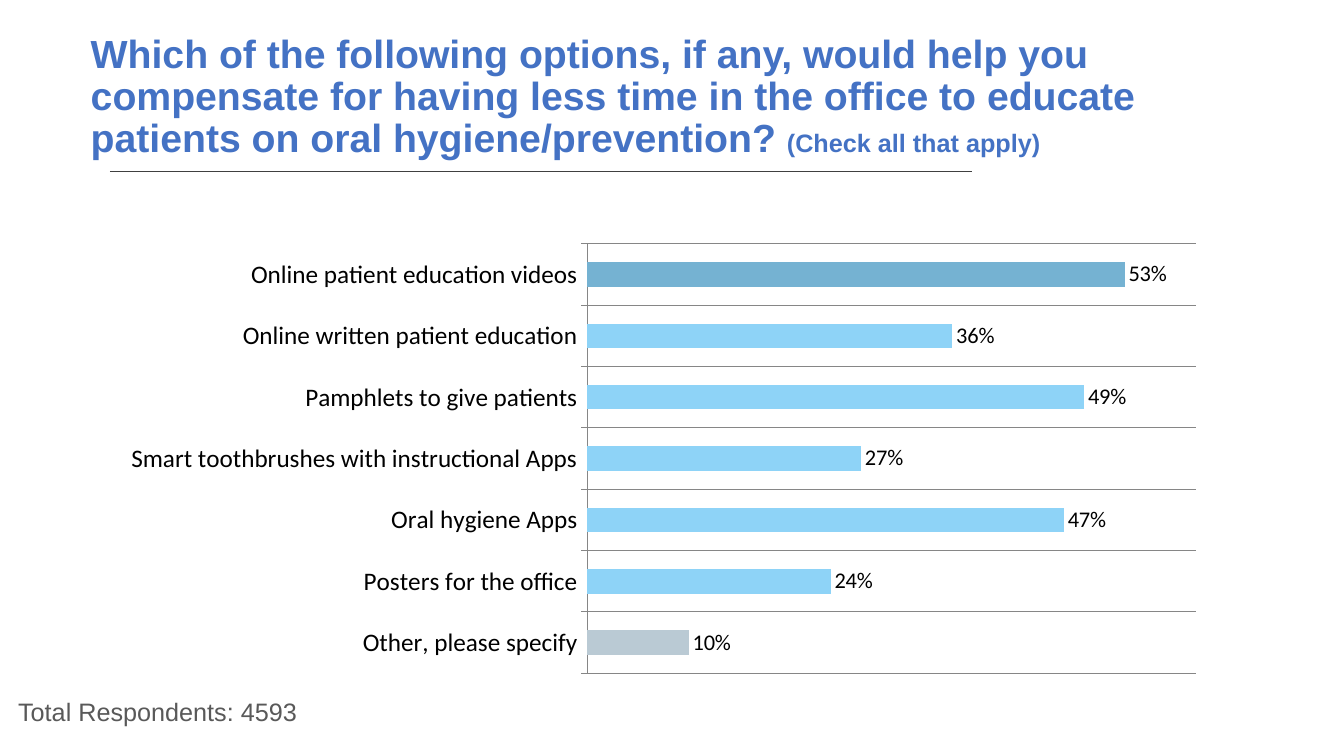
"""Build a survey slide with a bar chart of patient education options."""
from dataclasses import dataclass

from lxml.etree import SubElement
from pptx import Presentation
from pptx.chart.data import CategoryChartData
from pptx.dml.color import RGBColor
from pptx.enum.chart import XL_CHART_TYPE, XL_LABEL_POSITION, XL_TICK_MARK
from pptx.enum.shapes import MSO_CONNECTOR
from pptx.enum.text import MSO_ANCHOR, MSO_AUTO_SIZE, PP_ALIGN
from pptx.oxml import parse_xml
from pptx.oxml.ns import nsdecls, qn
from pptx.util import Inches, Pt

TITLE_BLUE = "4472C4"
FOOT_GREY = "595959"
BLACK = "000000"
AXIS_GREY = "868686"
LIGHT_BLUE = "8ED3F7"


@dataclass(frozen=True)
class Answer:
    """One survey answer with its share and bar colour."""
    label: str
    share: float
    colour: str = LIGHT_BLUE


@dataclass(frozen=True)
class Span:
    """One run of text with its look."""
    text: str
    size: float
    colour: str
    bold: bool = False


ANSWERS = [
    Answer("Online patient education videos", 0.53, "75B2D2"),
    Answer("Online written patient education", 0.36),
    Answer("Pamphlets to give patients", 0.49),
    Answer("Smart toothbrushes with instructional Apps", 0.27),
    Answer("Oral hygiene Apps", 0.47),
    Answer("Posters for the office", 0.24),
    Answer("Other, please specify", 0.10, "BACAD4"),
]
TITLE = [
    Span("Which of the following options, if any, would help you compensate for "
         "having less time in the office to educate patients on oral "
         "hygiene/prevention? ", 28, TITLE_BLUE, True),
    Span("(Check all that apply)", 18, TITLE_BLUE, True),
]
RESPONDENTS = [Span("Total Respondents: 4593", 18, FOOT_GREY)]


def colour(code: str) -> RGBColor:
    """Turn a hex string into a colour."""
    return RGBColor.from_string(code)


def fill_placeholder(box, place: tuple, spans: list[Span], anchor) -> None:
    """Move a placeholder and write its single paragraph run by run."""
    box.left, box.top, box.width, box.height = map(Inches, place)
    frame = box.text_frame
    frame.word_wrap = True
    frame.auto_size = MSO_AUTO_SIZE.NONE
    frame.vertical_anchor = anchor
    para = frame.paragraphs[0]
    para.alignment = PP_ALIGN.LEFT
    para.line_spacing = 0.9
    para.space_before = Pt(0)
    properties = para._p.get_or_add_pPr()
    properties.set("marL", "0")
    properties.set("indent", "0")
    SubElement(properties, qn("a:buNone"))
    for span in spans:
        run = para.add_run()
        run.text = span.text
        run.font.name = "Arial"
        run.font.size = Pt(span.size)
        run.font.bold = span.bold
        run.font.color.rgb = colour(span.colour)


def add_rule(page) -> None:
    """Draw the thin line below the title."""
    rule = page.shapes.add_connector(
        MSO_CONNECTOR.STRAIGHT, Inches(1.09), Inches(1.7), Inches(9.64), Inches(1.7))
    rule.line.color.rgb = colour("404040")
    rule.line.width = Pt(0.5)
    SubElement(rule._element.spPr, qn("a:effectLst"))


def style_font(font, size: float) -> None:
    """Give chart text its font, size and colour."""
    font.name = "Calibri"
    font.size = Pt(size)
    font.color.rgb = colour(BLACK)


def style_axes(chart) -> None:
    """List answers from the top with lines between them and hide the values."""
    categories = chart.category_axis
    categories.reverse_order = True
    categories.has_major_gridlines = True
    categories.major_tick_mark = XL_TICK_MARK.OUTSIDE
    style_font(categories.tick_labels.font, 18)
    for line in (categories.format.line, categories.major_gridlines.format.line):
        line.color.rgb = colour(AXIS_GREY)
        line.width = Pt(0.75)
    values = chart.value_axis
    values.minimum_scale = 0
    values.maximum_scale = 0.6
    values.has_major_gridlines = False
    values.visible = False


def place_plot(chart) -> None:
    """Fix the inner plot area within the chart."""
    area = chart._chartSpace.chart.plotArea
    for old in area.findall(qn("c:layout")):
        area.remove(old)
    shares = {"x": 0.434, "y": 0.02, "w": 0.546, "h": 0.96}
    modes = "".join(f'<c:{key}Mode val="edge"/>' for key in "xy")
    sizes = "".join(f'<c:{key} val="{share}"/>' for key, share in shares.items())
    area.insert(0, parse_xml(
        f'<c:layout {nsdecls("c")}><c:manualLayout><c:layoutTarget val="inner"/>'
        f'{modes}{sizes}</c:manualLayout></c:layout>'))


def add_answer_chart(page, answers: list[Answer]) -> None:
    """Add the bar chart of answers."""
    data = CategoryChartData(number_format="0%")
    data.categories = [answer.label for answer in answers]
    data.add_series("Series 1", [answer.share for answer in answers])
    chart = page.shapes.add_chart(
        XL_CHART_TYPE.BAR_CLUSTERED, Inches(1.03), Inches(2.33),
        Inches(11.05), Inches(4.44), data).chart
    chart.has_legend = False
    chart.has_title = False
    style_font(chart.font, 18)
    style_axes(chart)
    place_plot(chart)
    plot = chart.plots[0]
    plot.gap_width = 150
    plot.vary_by_categories = False
    series = plot.series[0]
    series.invert_if_negative = False
    series.format.fill.solid()
    series.format.fill.fore_color.rgb = colour(LIGHT_BLUE)
    for index, answer in enumerate(answers):
        if answer.colour != LIGHT_BLUE:
            fill = series.points[index].format.fill
            fill.solid()
            fill.fore_color.rgb = colour(answer.colour)
    labels = series.data_labels
    labels.show_value = True
    labels.position = XL_LABEL_POSITION.OUTSIDE_END
    labels.number_format = "0%"
    labels.number_format_is_linked = False
    style_font(labels.font, 16)


def main() -> None:
    """Build and save the deck."""
    deck = Presentation()
    deck.slide_width = Inches(13.33)
    deck.slide_height = Inches(7.5)
    page = deck.slides.add_slide(deck.slide_layouts[1])
    add_rule(page)
    fill_placeholder(page.shapes.title, (0.8, 0.68, 12, 0.58), TITLE, MSO_ANCHOR.MIDDLE)
    fill_placeholder(page.placeholders[1], (0.08, 6.89, 12, 0.42), RESPONDENTS, MSO_ANCHOR.TOP)
    add_answer_chart(page, ANSWERS)
    deck.save("out.pptx")


if __name__ == "__main__":
    main()
